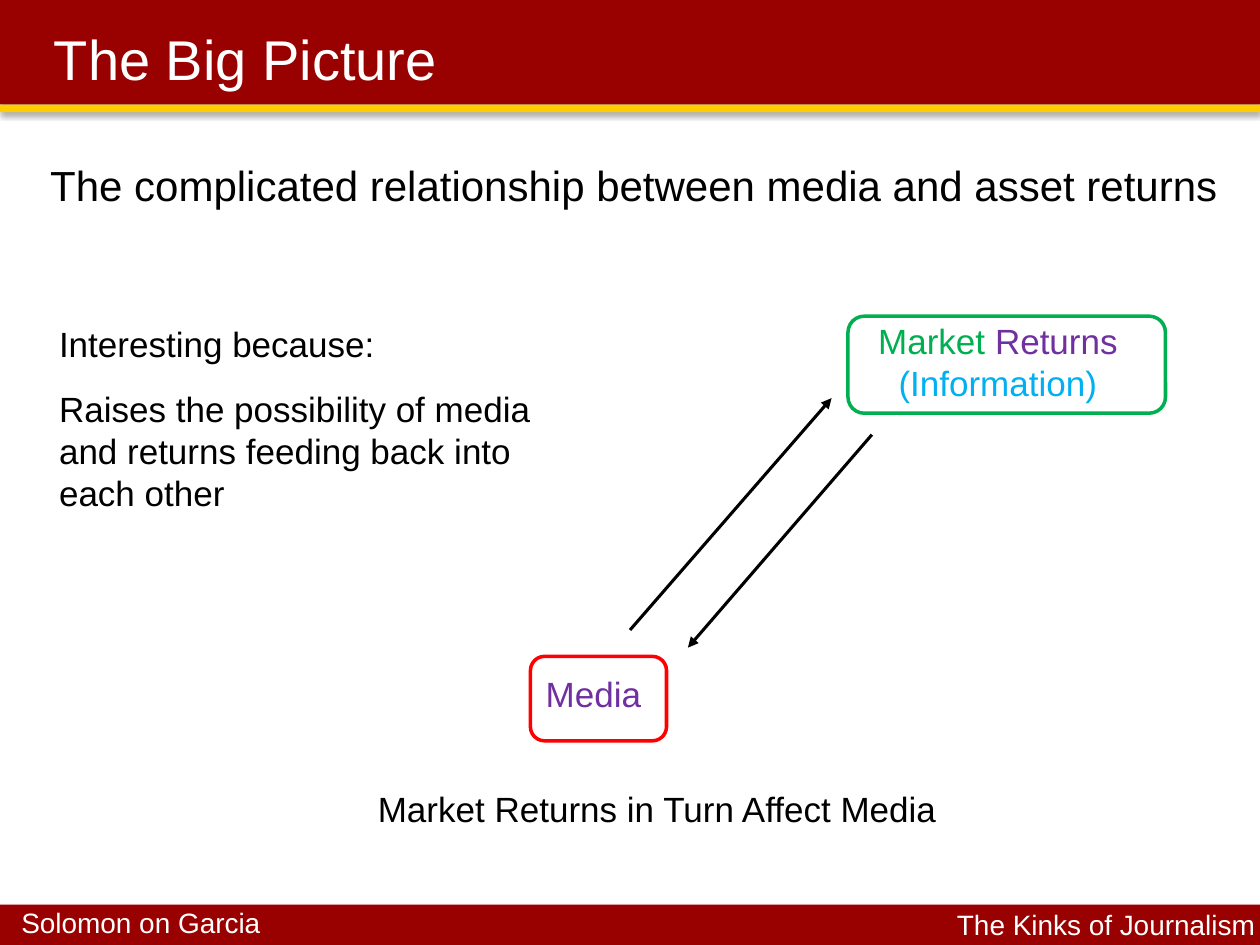
from dataclasses import dataclass

from lxml import etree
from pptx import Presentation
from pptx.dml.color import RGBColor
from pptx.enum.shapes import MSO_CONNECTOR, MSO_SHAPE
from pptx.enum.text import MSO_ANCHOR, PP_ALIGN
from pptx.oxml import parse_xml
from pptx.oxml.ns import nsdecls, qn
from pptx.util import Inches, Pt

RECT, ROUND = MSO_SHAPE.RECTANGLE, MSO_SHAPE.ROUNDED_RECTANGLE
LINE = MSO_CONNECTOR.STRAIGHT
LEFT, CENTER, RIGHT = PP_ALIGN.LEFT, PP_ALIGN.CENTER, PP_ALIGN.RIGHT
TOP, MIDDLE = MSO_ANCHOR.TOP, MSO_ANCHOR.MIDDLE


@dataclass(frozen=True)
class Theme:
    font: str = "Arial"
    title: int = 32
    lead: int = 24
    body: int = 20
    foot: int = 16
    bar: str = "990000"
    gold: str = "FFCC00"
    white: str = "FFFFFF"
    black: str = "000000"
    red: str = "FF0000"
    green: str = "00B050"
    purple: str = "7030A0"
    blue: str = "00B0F0"


theme = Theme()
rgb = RGBColor.from_string

deck = Presentation()
deck.slide_width, deck.slide_height = Inches(10), Inches(7.5)
slide = deck.slides.add_slide(deck.slide_layouts[6])
shapes = slide.shapes


def add_text(box, paras, size, color=theme.black, align=LEFT, anchor=TOP, inset=True):
    """Add a wrapped text box; each paragraph is a list of (text, color) runs or a string."""
    frame = shapes.add_textbox(*map(Inches, box)).text_frame
    frame.word_wrap = True
    frame.vertical_anchor = anchor
    if not inset:
        frame.margin_left = frame.margin_right = 0
        frame.margin_top = frame.margin_bottom = 0
    for i, runs in enumerate(paras):
        para = frame.paragraphs[0] if i == 0 else frame.add_paragraph()
        para.alignment = align
        para.font.name, para.font.size = theme.font, Pt(size)
        para.font.color.rgb = rgb(color)
        if i:
            para.space_before = Pt(5)
        if i < len(paras) - 1:
            para.space_after = Pt(8)
        if isinstance(runs, str):
            runs = [(runs, color)]
        for text, tint in runs:
            run = para.add_run()
            run.text = text
            if tint != color:
                run.font.color.rgb = rgb(tint)


# Header and footer bars
for top, height, fill in [
    (7.18, 0.32, theme.bar),
    (0, 0.83, theme.bar),
    (0.83, 0.06, theme.gold),
]:
    bar = shapes.add_shape(RECT, 0, Inches(top), Inches(10), Inches(height))
    bar.fill.solid()
    bar.fill.fore_color.rgb = rgb(fill)
    bar.line.fill.background()
    bar._element.spPr.append(parse_xml(
        f'<a:effectLst {nsdecls("a")}>'
        f'<a:outerShdw blurRad="{Pt(3.1)}" dist="{Pt(1.7)}" dir="5400000" rotWithShape="0">'
        f'<a:srgbClr val="{theme.black}"><a:alpha val="36000"/></a:srgbClr>'
        '</a:outerShdw></a:effectLst>'
    ))

add_text((0.17, 7.19, 3.27, 0.27), ["Solomon on Garcia"],
         theme.foot, theme.white, inset=False)
add_text((6.69, 7.2, 3.27, 0.27), ["The Kinks of Journalism"],
         theme.foot, theme.white, RIGHT, inset=False)
add_text((0.33, 0.17, 9, 0.58), ["The Big Picture"],
         theme.title, theme.white, anchor=MIDDLE)

# Statement and reasons
add_text((0.3, 1.22, 9.83, 0.58),
         ["The complicated relationship between media and asset returns"], theme.lead)
add_text((0.37, 2.51, 4.21, 2.07), [
    "Interesting because:",
    "Raises the possibility of media and returns feeding back into each other",
], theme.body)

# Loop between media and returns
for box, color in [
    ((4.21, 5.21, 1.08, 0.67), theme.red),
    ((6.73, 2.51, 2.52, 0.77), theme.green),
]:
    frame = shapes.add_shape(ROUND, *map(Inches, box))
    frame.shadow.inherit = False
    frame.fill.background()
    frame.line.color.rgb = rgb(color)
    frame.line.width = Pt(2)

add_text((4.21, 5.29, 1, 0.44), ["Media"], theme.body, theme.purple, CENTER)
add_text((6.76, 2.49, 2.32, 0.77), [[
    ("Market ", theme.green),
    ("Returns ", theme.purple),
    ("(Information)", theme.blue),
]], theme.body, theme.green, CENTER)
add_text((2.9, 6.2, 5.12, 0.44), ["Market Returns in Turn Affect Media"], theme.body)

for ends in [(6.92, 3.45, 5.46, 5.14), (5, 5, 6.6, 3.16)]:
    arrow = shapes.add_connector(LINE, *map(Inches, ends))
    arrow.line.color.rgb = rgb(theme.black)
    arrow.line.width = Pt(1.75)
    etree.SubElement(arrow.line._get_or_add_ln(), qn("a:tailEnd"), type="triangle")
    etree.SubElement(arrow._element.spPr, qn("a:effectLst"))

deck.save("out.pptx")
